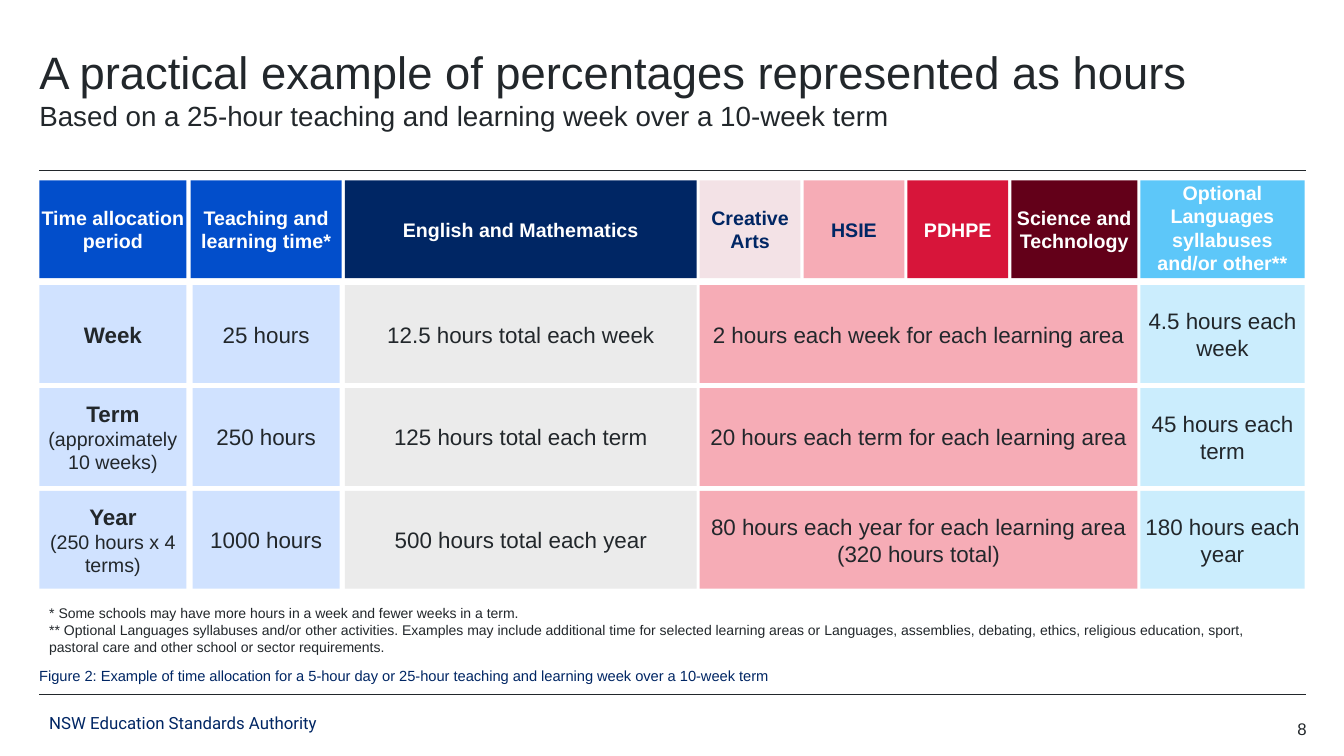
from lxml import etree
from pptx import Presentation
from pptx.dml.color import RGBColor
from pptx.enum.shapes import MSO_CONNECTOR, MSO_SHAPE
from pptx.enum.text import MSO_ANCHOR, PP_ALIGN
from pptx.oxml.ns import qn
from pptx.util import Inches, Pt

RECTANGLE, STRAIGHT = MSO_SHAPE.RECTANGLE, MSO_CONNECTOR.STRAIGHT
TOP, MIDDLE, BOTTOM = MSO_ANCHOR.TOP, MSO_ANCHOR.MIDDLE, MSO_ANCHOR.BOTTOM
LEFT, CENTER, RIGHT = PP_ALIGN.LEFT, PP_ALIGN.CENTER, PP_ALIGN.RIGHT

INK, NAVY, WHITE = "22272B", "002664", "FFFFFF"
BLUE, PALE_BLUE, PINK = "024ECB", "D0E2FF", "F6ACB6"
MARGIN, RULE_END = 0.39, 12.95
HEADER_TOP, FIRST_ROW_TOP, ROW_PITCH, CELL_HEIGHT = 1.79, 2.83, 1.02, 0.97

HEADERS = [
    (0.39, 1.46, BLUE, WHITE, "Time allocation period", MIDDLE),
    (1.89, 1.5, BLUE, WHITE, "Teaching and learning time*", MIDDLE),
    (3.42, 3.49, NAVY, WHITE, "English and Mathematics", MIDDLE),
    (6.94, 1, "F3E2E6", NAVY, "Creative Arts", MIDDLE),
    (7.97, 1, PINK, NAVY, "HSIE", MIDDLE),
    (9, 1, "D7153A", WHITE, "PDHPE", MIDDLE),
    (10.03, 1.25, "630019", WHITE, "Science and Technology", MIDDLE),
    (11.31, 1.63, "5DC7F9", WHITE,
     "Optional Languages syllabuses and/or other**", TOP),
]
BODY_COLUMNS = [
    (0.39, 1.46, PALE_BLUE),
    (1.91, 1.46, PALE_BLUE),
    (3.42, 3.49, "EBEBEB"),
    (6.94, 4.34, PINK),
    (11.31, 1.63, "CBEDFD"),
]
PERIODS = [
    ("Week", "", "25 hours", "12.5 hours total each week",
     "2 hours each week for each learning area", "4.5 hours each week"),
    ("Term", "(approximately 10 weeks)", "250 hours", "125 hours total each term",
     "20 hours each term for each learning area", "45 hours each term"),
    ("Year", "(250 hours x 4 terms)", "1000 hours", "500 hours total each year",
     "80 hours each year for each learning area (320 hours total)",
     "180 hours each year"),
]
FOOTNOTES = [
    "* Some schools may have more hours in a week and fewer weeks in a term.",
    "** Optional Languages syllabuses and/or other activities. Examples may include "
    "additional time for selected learning areas or Languages, assemblies, debating, "
    "ethics, religious education, sport, pastoral care and other school or sector "
    "requirements.",
]
CAPTION = ("Figure 2: Example of time allocation for a 5-hour day or 25-hour teaching "
           "and learning week over a 10-week term")


def color(hex_code):
    """Turn a hex string into a colour."""
    return RGBColor.from_string(hex_code)


def span(text, size, ink=INK, bold=False, font="Arial"):
    """Describe one run of text."""
    return text, size, ink, bold, font


def write(frame, lines, align=LEFT, anchor=TOP, insets=(0, 0, 0, 0)):
    """Fill a text frame with one paragraph for each span."""
    frame.word_wrap = True
    frame.vertical_anchor = anchor
    (frame.margin_left, frame.margin_top,
     frame.margin_right, frame.margin_bottom) = map(Inches, insets)
    for index, (text, size, ink, bold, font) in enumerate(lines):
        para = frame.paragraphs[0] if index == 0 else frame.add_paragraph()
        para.alignment = align
        run = para.add_run()
        run.text = text
        run.font.size = Pt(size)
        run.font.name = font
        run.font.bold = bold
        run.font.color.rgb = color(ink)


def add_text(page, place, lines, **layout):
    """Add a text box at the given place."""
    box = page.shapes.add_textbox(*map(Inches, place))
    write(box.text_frame, lines, **layout)


def add_cell(page, place, fill, lines, anchor=MIDDLE):
    """Add a filled rectangle with centred text."""
    cell = page.shapes.add_shape(RECTANGLE, *map(Inches, place))
    cell.shadow.inherit = False
    cell.fill.solid()
    cell.fill.fore_color.rgb = color(fill)
    cell.line.fill.background()
    write(cell.text_frame, lines, align=CENTER, anchor=anchor)


def add_rule(page, top):
    """Add a thin horizontal line across the page."""
    rule = page.shapes.add_connector(
        STRAIGHT, *map(Inches, (MARGIN, top, RULE_END, top)))
    rule.line.color.rgb = color(INK)
    rule.line.width = Pt(0.5)
    etree.SubElement(rule._element.spPr, qn("a:effectLst"))


def add_grid(page):
    """Add the header row and the three period rows."""
    for left, width, fill, ink, label, anchor in HEADERS:
        add_cell(page, (left, HEADER_TOP, width, CELL_HEIGHT), fill,
                 [span(label, 14, ink, bold=True)], anchor)
    for row, (period, detail, *hours) in enumerate(PERIODS):
        heading = [span(period, 16, bold=True)]
        if detail:
            heading.append(span(detail, 14))
        contents = [heading] + [[span(text, 16)] for text in hours]
        top = FIRST_ROW_TOP + row * ROW_PITCH
        for (left, width, fill), lines in zip(BODY_COLUMNS, contents):
            add_cell(page, (left, top, width, CELL_HEIGHT), fill, lines)


def main():
    """Build the slide and save it."""
    deck = Presentation()
    deck.slide_width, deck.slide_height = Inches(13.33), Inches(7.5)
    page = deck.slides.add_slide(deck.slide_layouts[6])
    padding = (0.1, 0.05, 0.1, 0.05)

    add_rule(page, 1.69)
    add_rule(page, 6.89)
    add_text(page, (MARGIN, 6.57, 9.33, 0.75),
             [span("NSW Education Standards Authority", 12, NAVY, font="Roboto")],
             anchor=BOTTOM, insets=padding)
    add_text(page, (MARGIN, 0.4, 12, 1.1),
             [span("A practical example of percentages represented as hours", 32.4),
              span("Based on a 25-hour teaching and learning week over a 10-week term",
                   19.8)],
             insets=(0, 0.04, 0, 0))
    add_text(page, (12.17, 7.13, 0.79, 0.2), [span("8", 12)], align=RIGHT)
    add_text(page, (MARGIN, 5.95, 12.54, 0.61),
             [span(note, 10) for note in FOOTNOTES], insets=padding)
    add_grid(page)
    add_text(page, (0.29, 6.57, 12.54, 0.29), [span(CAPTION, 10.5, NAVY)],
             insets=padding)
    deck.save("out.pptx")


if __name__ == "__main__":
    main()
